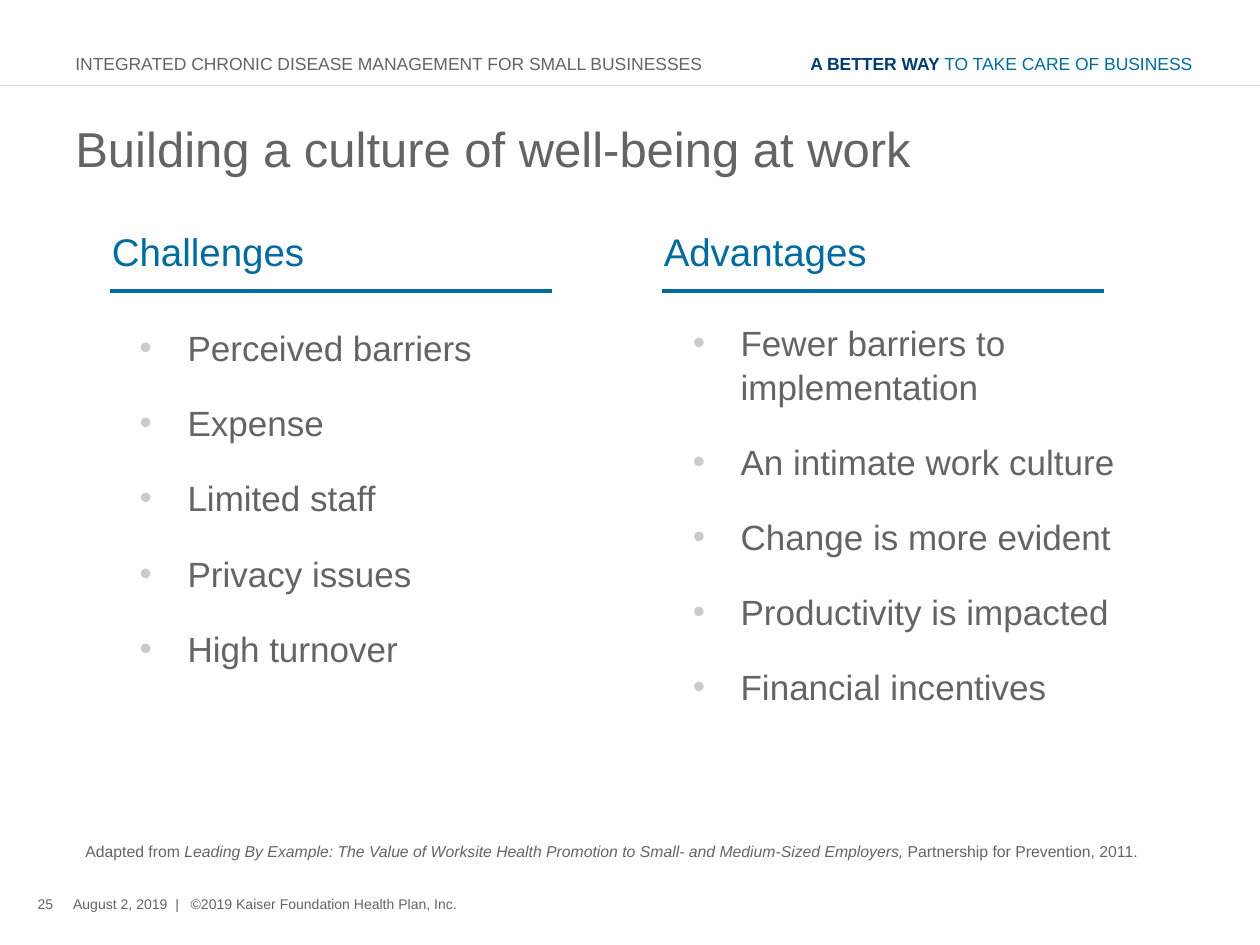
from dataclasses import dataclass

import pptx
import pptx.dml.color
import pptx.enum.shapes
import pptx.enum.text
import pptx.util
from lxml import etree
from pptx.oxml.ns import qn

Inches = pptx.util.Inches
Pt = pptx.util.Pt
PP_ALIGN = pptx.enum.text.PP_ALIGN
ANCHOR = pptx.enum.text.MSO_ANCHOR


@dataclass(frozen=True)
class Theme:
    font: str = "Arial"
    grey: str = "646464"
    blue: str = "006B9E"
    navy: str = "003C71"
    bullet: str = "CBCBCB"
    hairline: str = "D9D9D9"
    title: int = 28
    heading: int = 22
    body: int = 20
    header: int = 10
    source: int = 9
    footer: int = 8


THEME = Theme()


def set_all(target, values):
    for name, value in values.items():
        setattr(target, name, value)


def add_run(p, text, size, color, **fmt):
    r = p.add_run()
    r.text = text
    set_all(r.font, {"name": THEME.font, "size": Pt(size), **fmt})
    r.font.color.rgb = pptx.dml.color.RGBColor.from_string(color)


def add_box(s, box, **frame):
    tf = s.shapes.add_textbox(*map(Inches, box)).text_frame
    set_all(tf, {"word_wrap": True, **frame})
    return tf


def add_text(s, box, runs, align=PP_ALIGN.LEFT, **frame):
    """Place one paragraph; each run is (text, size, color, format dict)."""
    p = add_box(s, box, **frame).paragraphs[0]
    p.alignment = align
    for text, size, color, fmt in runs:
        add_run(p, text, size, color, **fmt)


def add_rule(s, left, right, y, color, width):
    line = s.shapes.add_connector(pptx.enum.shapes.MSO_CONNECTOR.STRAIGHT,
                                  *map(Inches, (left, y, right, y)))
    line.line.color.rgb = pptx.dml.color.RGBColor.from_string(color)
    line.line.width = Pt(width)
    etree.SubElement(line._element.spPr, qn("a:effectLst"))


def add_bullet(p, indent, hanging):
    pPr = p._p.get_or_add_pPr()
    pPr.set("marL", str(Inches(indent)))
    pPr.set("indent", str(-Inches(hanging)))
    color = etree.SubElement(pPr, qn("a:buClr"))
    etree.SubElement(color, qn("a:srgbClr")).set("val", THEME.bullet)
    etree.SubElement(pPr, qn("a:buFont")).set("typeface", THEME.font)
    etree.SubElement(pPr, qn("a:buChar")).set("char", "•")


def add_list(s, box, items, indent, **frame):
    tf = add_box(s, box, **frame)
    for i, item in enumerate(items):
        p = tf.paragraphs[0] if i == 0 else tf.add_paragraph()
        add_bullet(p, indent, 0.38)
        set_all(p, {"line_spacing": 1.04, "space_after": Pt(6),
                    "space_before": Pt(12 if i else 0)})
        add_run(p, item, THEME.body, THEME.grey)


def add_column(s, left, top, heading, items, list_box, indent, **frame):
    """Heading over a rule, then a bulleted list; list_box is relative to left, top."""
    add_text(s, (left, top, 2.57, 0.75),
             [(heading, THEME.heading, THEME.blue, {})])
    add_rule(s, left + 0.08, left + 3.59, top + 0.55, THEME.blue, 2)
    dx, dy, width, height = list_box
    add_list(s, (left + dx, top + dy, width, height), items, indent, **frame)


def add_header(s, top, width):
    add_text(s, (0.5, top, 5.34, 0.4),
             [("INTEGRATED CHRONIC DISEASE MANAGEMENT FOR SMALL BUSINESSES",
               THEME.header, THEME.grey, {})])
    add_text(s, (6.27, top, 3.29, 0.27),
             [("A BETTER WAY ", THEME.header, THEME.navy, {"bold": True}),
              ("TO TAKE CARE OF BUSINESS", THEME.header, THEME.blue, {})],
             align=PP_ALIGN.RIGHT)
    add_rule(s, 0, width, top + 0.31, THEME.hairline, 0.5)


def add_footer(s, top):
    add_text(s, (0.14, top, 0.38, 0.24),
             [("25", THEME.footer, THEME.grey, {})], align=PP_ALIGN.RIGHT)
    add_text(s, (0.58, top, 4.81, 0.24),
             [("August 2, 2019  |   ©2019 Kaiser Foundation Health Plan, Inc.",
               THEME.footer, THEME.grey, {})], margin_left=0, margin_right=0)


def add_source(s, box):
    style = (THEME.source, THEME.grey)
    add_text(s, box, [
        ("Adapted from ", *style, {}),
        ("Leading By Example: The Value of Worksite Health Promotion to "
         "Small- and Medium-Sized Employers, ", *style, {"italic": True}),
        ("Partnership for Prevention, 2011.", *style, {})])


def main():
    prs = pptx.Presentation()
    prs.slide_width, prs.slide_height = Inches(10), Inches(7.5)
    s = prs.slides.add_slide(prs.slide_layouts[6])

    add_header(s, 0.37, 10)
    add_text(s, (0.5, 0.86, 9.08, 0.63),
             [("Building a culture of well-being at work",
               THEME.title, THEME.grey, {})], vertical_anchor=ANCHOR.MIDDLE)
    add_column(s, 0.79, 1.76, "Challenges",
               ["Perceived barriers", "Expense", "Limited staff",
                "Privacy issues", "High turnover"],
               (-0.09, 0.77, 3.84, 2.79), 0.69)
    add_column(s, 5.17, 1.76, "Advantages",
               ["Fewer barriers to implementation", "An intimate work culture",
                "Change is more evident", "Productivity is impacted",
                "Financial incentives"],
               (-0.17, 0.58, 4.3, 3.56), 0.78, margin_top=Inches(0.2))
    add_source(s, (0.58, 6.63, 9, 0.28))
    add_footer(s, 7.06)
    prs.save("out.pptx")


if __name__ == "__main__":
    main()
